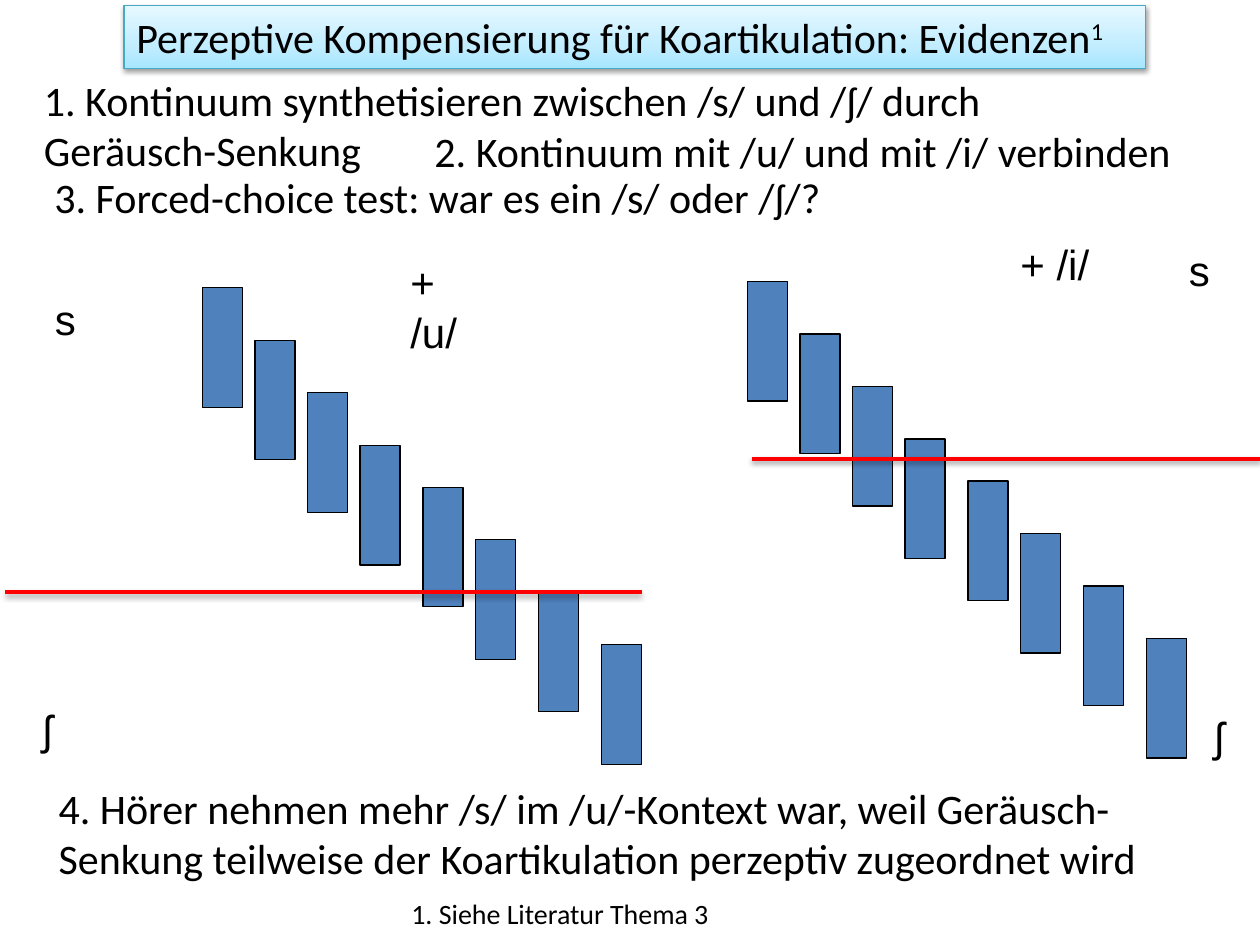
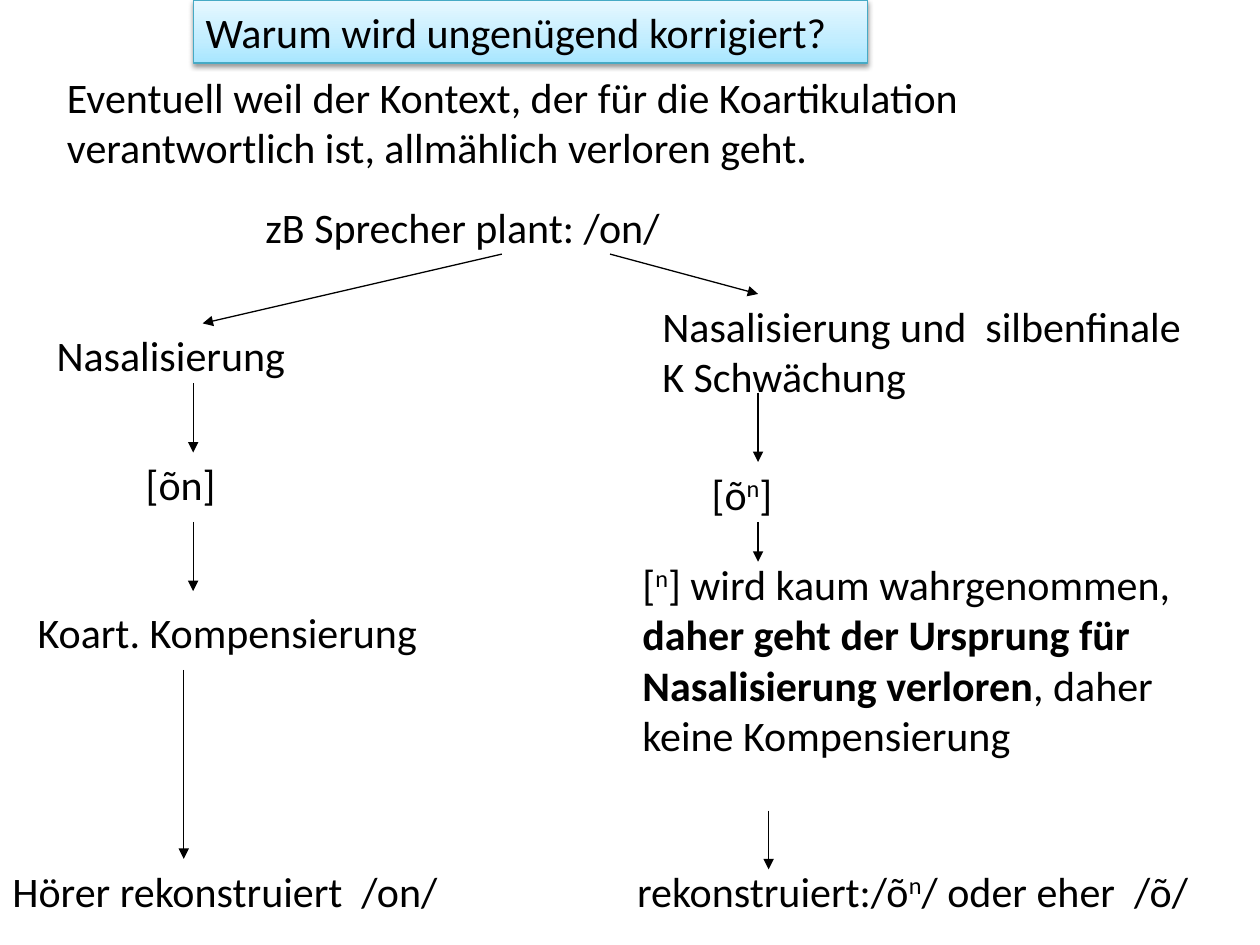
import itertools

import pptx
import pptx.dml.color
import pptx.enum.shapes
import pptx.enum.text
import pptx.oxml
import pptx.oxml.ns
import pptx.util

RGB = pptx.dml.color.RGBColor
BLACK = RGB(0x00, 0x00, 0x00)
RED = RGB(0xFF, 0x00, 0x00)
BLUE = RGB(0x4F, 0x81, 0xBD)
TEAL = RGB(0x46, 0xAA, 0xC5)
FADE = ((0, RGB(0xA7, 0xE6, 0xFF)), (35, RGB(0xC1, 0xED, 0xFF)),
        (100, RGB(0xE7, 0xF8, 0xFF)))

SCALE = 7620  # EMU in one px, 120 px to the inch
WIDE, HIGH = 1200, 900
BAR = (38, 114)
STEPS = [(50, 50)] * 3 + [(60, 40), (50, 50), (60, 50), (60, 50)]
SUP = {"sup": True}
BOLD = {"bold": True}


def px(*nums):
    return [pptx.util.Emu(num * SCALE) for num in nums]


def xml(text):
    """Parse an element that has a separate closing tag."""
    space = pptx.oxml.ns.nsdecls("a")
    return pptx.oxml.parse_xml(text.replace(">", f" {space}>", 1))


def shade(shape):
    """Give the shape a soft shadow below it."""
    shape._element.spPr.append(xml(
        '<a:effectLst><a:outerShdw blurRad="39370" dist="20320" dir="5400000" '
        f'rotWithShape="0"><a:srgbClr val="{BLACK}"><a:alpha val="38000"/>'
        '</a:srgbClr></a:outerShdw></a:effectLst>'))


def write(shape, *parts, font="Calibri", size=24, wrap=True):
    """Fill the shape with parts: plain strings or (string, style) pairs."""
    frame = shape.text_frame
    frame.word_wrap = wrap
    frame.auto_size = pptx.enum.text.MSO_AUTO_SIZE.SHAPE_TO_FIT_TEXT
    frame.vertical_anchor = pptx.enum.text.MSO_ANCHOR.TOP
    para = frame.paragraphs[0]
    para.alignment = pptx.enum.text.PP_ALIGN.LEFT
    for part in parts:
        words, style = (part, {}) if isinstance(part, str) else part
        run = para.add_run()
        run.text = words
        run.font.name = font
        run.font.size = pptx.util.Pt(size)
        run.font.color.rgb = BLACK
        run.font.bold = style.get("bold", False)
        if style.get("sup"):
            run._r.get_or_add_rPr().set("baseline", "30000")


def label(slide, box, *parts, **form):
    write(slide.shapes.add_textbox(*px(*box)), *parts, **form)


def rect(slide, box, edge):
    kind = pptx.enum.shapes.MSO_SHAPE.RECTANGLE
    shape = slide.shapes.add_shape(kind, *px(*box))
    shape.line.color.rgb = edge
    shape.line.width = pptx.util.Pt(0.75)
    return shape


def title(slide, box, *parts):
    shape = rect(slide, box, TEAL)
    stops = "".join(f'<a:gs pos="{pos * 1000}"><a:srgbClr val="{tint}"/></a:gs>'
                    for pos, tint in FADE)
    shape._element.spPr.prstGeom.addnext(xml(
        f'<a:gradFill><a:gsLst>{stops}</a:gsLst>'
        '<a:lin ang="16200000" scaled="0"/></a:gradFill>'))
    shade(shape)
    write(shape, *parts)


def rule(slide, ends, color, width):
    kind = pptx.enum.shapes.MSO_CONNECTOR.STRAIGHT
    line = slide.shapes.add_connector(kind, *px(*ends))
    line.line.color.rgb = color
    line.line.width = pptx.util.Pt(width)
    return line


def arrow(slide, *ends):
    line = rule(slide, ends, BLACK, 0.75)
    line.line._get_or_add_ln().append(
        xml('<a:tailEnd type="triangle"></a:tailEnd>'))
    line._element.spPr.append(xml("<a:effectLst></a:effectLst>"))


def panel(slide, left, top, vowel, tag, ess, esh, cut):
    """Draw falling bars from left, top; other places are offsets from there."""
    start = itertools.accumulate(
        STEPS, lambda at, step: (at[0] + step[0], at[1] + step[1]),
        initial=(left, top))
    for spot in start:
        bar = rect(slide, (*spot, *BAR), BLACK)
        bar.fill.solid()
        bar.fill.fore_color.rgb = BLUE
        bar.shadow.inherit = False
    for words, spot, width, wrap in ((vowel, tag, 100, False),
                                     ("s", ess, 20, True),
                                     ("ʃ", esh, 50, True)):
        box = (left + spot[0], top + spot[1], width, 61)
        label(slide, box, words, font="Arial", wrap=wrap)
    across, down, length = cut
    ends = (left + across, top + down, left + across + length, top + down)
    shade(rule(slide, ends, RED, 2))


def proof(slide):
    title(slide, (118, 5, 973, 60),
          "Perzeptive Kompensierung für Koartikulation: Evidenzen", ("1", SUP))
    label(slide, (30, 65, 925, 109),
          "1. Kontinuum synthetisieren zwischen /s/ und /ʃ/ durch "
          "Geräusch-Senkung")
    label(slide, (402, 114, 766, 60),
          "2. Kontinuum mit /u/ und mit /i/ verbinden")
    label(slide, (40, 157, 797, 60),
          "3. Forced-choice test: war es ein /s/ oder /ʃ/?")
    panel(slide, 193, 274, "+ /u/", tag=(186, -36), ess=(-149, 0),
          esh=(-164, 390), cut=(-188, 290, 606))
    panel(slide, 712, 268, "+ /i/", tag=(248, -47), ess=(412, -41),
          esh=(433, 403), cut=(4, 169, 484))
    label(slide, (44, 739, 1100, 109),
          "4. Hörer nehmen mehr /s/ im /u/-Kontext war, weil Geräusch-Senkung "
          "teilweise der Koartikulation perzeptiv zugeordnet wird")
    label(slide, (380, 848, 358, 44), "1. Siehe Literatur Thema 3", size=16)


def kept(slide, left, top):
    """Left branch: the context stays audible."""
    label(slide, (left + 42, top, 244, 60), "Nasalisierung", wrap=False)
    label(slide, (left + 127, top + 123, 161, 60), "[õn]")
    label(slide, (left + 24, top + 264, 390, 60), "Koart. Kompensierung",
          wrap=False)
    label(slide, (left, top + 510, 438, 60), "Hörer rekonstruiert  /on/",
          wrap=False)
    for across, start, end in ((184, 57, 123), (184, 189, 255),
                               (175, 330, 510)):
        arrow(slide, left + across, top + start, left + across, top + end)


def lost(slide, left, top):
    """Right branch: the context fades away."""
    label(slide, (left + 24, top, 539, 109),
          "Nasalisierung und  silbenfinale K Schwächung")
    label(slide, (left + 71, top + 160, 84, 61), "[õ", ("n", SUP), "]",
          wrap=False)
    label(slide, (left + 5, top + 246, 548, 206), "[", ("n", SUP),
          "] wird kaum wahrgenommen, ",
          ("daher geht der Ursprung für Nasalisierung verloren", BOLD),
          ", daher keine Kompensierung")
    label(slide, (left, top + 538, 605, 60), "rekonstruiert:/õ", ("n", SUP),
          "/ oder eher  /õ/")
    for across, start, end in ((127, 94, 160), (127, 217, 255),
                               (137, 492, 548)):
        arrow(slide, left + across, top + start, left + across, top + end)


def cause(slide):
    title(slide, (184, 0, 642, 60), "Warum wird ungenügend korrigiert?")
    label(slide, (52, 62, 1058, 109),
          "Eventuell weil der Kontext, der für die Koartikulation "
          "verantwortlich ist, allmählich verloren geht.")
    label(slide, (241, 186, 407, 60), "zB Sprecher plant: /on/", wrap=False)
    arrow(slide, 478, 242, 193, 308)
    arrow(slide, 581, 242, 722, 280)
    kept(slide, 0, 308)
    lost(slide, 595, 280)


def main():
    deck = pptx.Presentation()
    deck.slide_width, deck.slide_height = px(WIDE, HIGH)
    for build in (proof, cause):
        build(deck.slides.add_slide(deck.slide_layouts[6]))
    deck.save("out.pptx")


if __name__ == "__main__":
    main()
